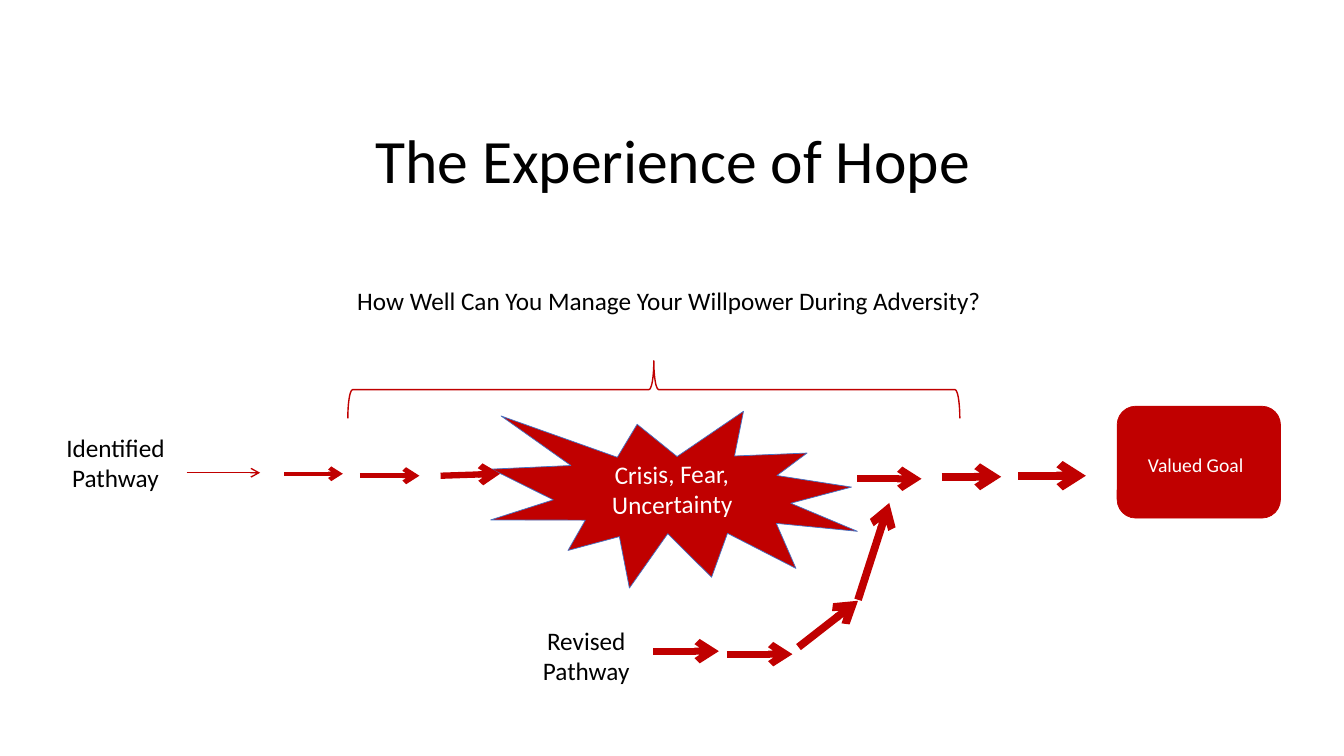
"""Build the slide on the experience of hope."""
import pptx
import pptx.util
import pptx.dml.color
import pptx.enum.shapes
import pptx.enum.text
import pptx.oxml
import pptx.oxml.ns
import lxml.etree

Inches = pptx.util.Inches
Pt = pptx.util.Pt
Shape = pptx.enum.shapes.MSO_SHAPE
Anchor = pptx.enum.text.MSO_ANCHOR
qn = pptx.oxml.ns.qn
hues = {"red": "C00000", "blue": "4472C4", "black": "000000", "white": "FFFFFF"}


def tint(name):
    return pptx.dml.color.RGBColor.from_string(hues[name])


deck = pptx.Presentation()
deck.slide_width, deck.slide_height = Inches(13.33), Inches(7.5)
slide = deck.slides.add_slide(deck.slide_layouts[6])

forms = [
    (Shape.RIGHT_BRACE, (6.2, 0.83, 0.57, 6.07), 270, None, "red", 1),
    (Shape.EXPLOSION1, (4.86, 4.04, 3.66, 1.82), 3.5, "red", "blue", 0.5),
    (Shape.ROUNDED_RECTANGLE, (11.08, 4.03, 1.62, 1.11), 0, "red", "red", 0.5),
]
for kind, place, turn, fill, edge, width in forms:
    form = slide.shapes.add_shape(kind, *map(Inches, place))
    form.rotation = turn
    form.shadow.inherit = False
    if fill:
        form.fill.solid()
        form.fill.fore_color.rgb = tint(fill)
    else:
        form.fill.background()
    form.line.color.rgb = tint(edge)
    form.line.width = Pt(width)

labels = [
    ("The Experience of Hope", (2.17, 1, 9.01, 1.25), 0, 44, "black", True),
    ("How Well Can You Manage Your Willpower During Adversity?",
     (3.31, 2.78, 6.65, 0.4), 0, 18, "black", True),
    ("Crisis, Fear, Uncertainty", (5.51, 4.5, 2.31, 0.71), 359.2, 18, "white", True),
    ("Valued Goal", (11.24, 4.44, 1.24, 0.34), 0, 14, "white", True),
    ("Identified\nPathway", (0.55, 4.24, 1.19, 0.71), 0, 18, "black", False),
    ("Revised\nPathway", (5.28, 6.15, 1.07, 0.71), 0, 18, "black", False),
]
for text, place, turn, size, color, wrap in labels:
    box = slide.shapes.add_textbox(*map(Inches, place))
    box.rotation = turn
    frame = box.text_frame
    frame.word_wrap = wrap
    frame.text = text
    title = size == 44
    frame.vertical_anchor = Anchor.MIDDLE if title else Anchor.TOP
    for para in frame.paragraphs:
        para.alignment = pptx.enum.text.PP_ALIGN.CENTER
        if title:
            para.line_spacing = 0.9
        para.font.name = "Calibri"
        para.font.size = Pt(size)
        para.font.color.rgb = tint(color)

arrows = [
    (1.85, 4.69, 2.58, 4.69, 1),
    (2.82, 4.7, 3.4, 4.7, 3),
    (3.57, 4.72, 4.16, 4.72, 3.5),
    (4.37, 4.72, 4.96, 4.7, 4.5),
    (8.5, 4.75, 9.14, 4.75, 5),
    (9.34, 4.73, 9.93, 4.73, 5.5),
    (10.1, 4.72, 10.77, 4.72, 6),
    (6.48, 6.46, 7.13, 6.46, 5),
    (7.21, 6.49, 7.86, 6.49, 5),
    (7.92, 6.42, 8.51, 5.96, 5.5),
    (8.51, 5.95, 8.82, 4.99, 5.5),
]
for *ends, width in arrows:
    arrow = slide.shapes.add_connector(
        pptx.enum.shapes.MSO_CONNECTOR.STRAIGHT, *map(Inches, ends))
    arrow.line.color.rgb = tint("red")
    arrow.line.width = Pt(width)
    props = arrow.line._get_or_add_ln()
    lxml.etree.SubElement(props, qn("a:tailEnd")).set("type", "arrow")
    lxml.etree.SubElement(props.getparent(), qn("a:effectLst"))

deck.save("out.pptx")
